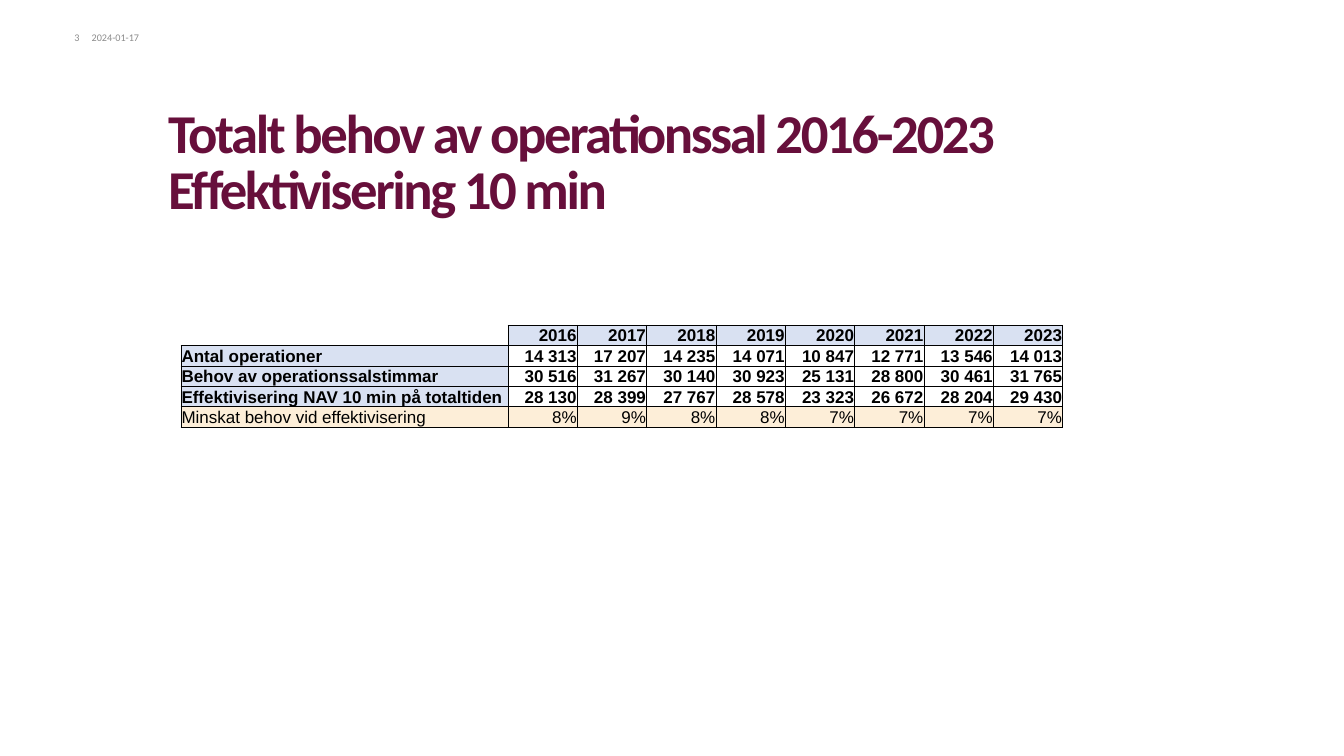
from lxml.etree import SubElement
from pptx import Presentation
from pptx.dml.color import RGBColor
from pptx.enum.text import MSO_ANCHOR as Anchor, MSO_AUTO_SIZE as AutoSize, PP_ALIGN as Align
from pptx.oxml.ns import qn
from pptx.util import Pt

PLUM = RGBColor(0x67, 0x0F, 0x3B)
GREY = RGBColor(0x8C, 0x8C, 0x8C)
BLACK = RGBColor(0, 0, 0)
PALE_BLUE = RGBColor(0xD9, 0xE1, 0xF2)
PALE_ORANGE = RGBColor(0xFD, 0xEE, 0xD8)

TITLE = "Totalt behov av operationssal 2016-2023\vEffektivisering 10 min"
ROWS = [
    ["", *(str(year) for year in range(2016, 2024))],
    ["Antal operationer", "14 313", "17 207", "14 235", "14 071",
     "10 847", "12 771", "13 546", "14 013"],
    ["Behov av operationssalstimmar", "30 516", "31 267", "30 140", "30 923",
     "25 131", "28 800", "30 461", "31 765"],
    ["Effektivisering NAV 10 min på totaltiden", "28 130", "28 399", "27 767", "28 578",
     "23 323", "26 672", "28 204", "29 430"],
    ["Minskat behov vid effektivisering", "8%", "9%", "8%", "8%", "7%", "7%", "7%", "7%"],
]
LABEL_WIDTH = 385.2
ROW_HEIGHT = 23


def format_runs(paragraph, name, size, color, bold=False):
    for run in paragraph.runs:
        font = run.font
        font.name, font.size, font.bold = name, Pt(size), bold
        font.color.rgb = color


def set_margins(owner, left, top, right, bottom):
    owner.margin_left, owner.margin_top = Pt(left), Pt(top)
    owner.margin_right, owner.margin_bottom = Pt(right), Pt(bottom)


def add_title(slide, left, top, width, height):
    title = slide.shapes.title
    title.left, title.top, title.width, title.height = map(Pt, (left, top, width, height))
    frame = title.text_frame
    frame.text = TITLE
    frame.word_wrap = True
    frame.auto_size = AutoSize.NONE
    frame.vertical_anchor = Anchor.BOTTOM
    set_margins(frame, 0, 0, 0, 6)
    heading = frame.paragraphs[0]
    heading.alignment = Align.LEFT
    heading.line_spacing = 0.85
    format_runs(heading, "Calibri", 64.5, PLUM, bold=True)
    for run in heading.runs:
        run.font._element.set("spc", "-280")


def add_page_label(slide, text, align, left, top, width, height):
    frame = slide.shapes.add_textbox(*map(Pt, (left, top, width, height))).text_frame
    frame.text = text
    frame.word_wrap = True
    frame.auto_size = AutoSize.SHAPE_TO_FIT_TEXT
    set_margins(frame, 0, 0, 0, 0)
    label = frame.paragraphs[0]
    label.alignment = align
    format_runs(label, "Calibri", 12, GREY)


def add_borders(cell, sides, width):
    """Draw black borders on the given sides, in the order L, R, T, B."""
    properties = cell._tc.get_or_add_tcPr()
    for side in sides:
        line = SubElement(properties, qn(f"a:ln{side}"), w=str(Pt(width)))
        fill = SubElement(line, qn("a:solidFill"))
        SubElement(fill, qn("a:srgbClr"), val=str(BLACK))


def format_cell(cell, row, column):
    is_corner = row == column == 0
    is_saving = row == len(ROWS) - 1
    set_margins(cell, 0.72, 0, 0.72, 0)
    cell.vertical_anchor = Anchor.BOTTOM
    add_borders(cell, "RB" if is_corner else "LRTB", 1 if is_saving else 0.5)
    if is_saving:
        cell.fill.solid()
        cell.fill.fore_color.rgb = PALE_ORANGE
    elif (row == 0 or column == 0) and not is_corner:
        cell.fill.solid()
        cell.fill.fore_color.rgb = PALE_BLUE
    else:
        cell.fill.background()
    entry = cell.text_frame.paragraphs[0]
    entry.alignment = Align.RIGHT if column else Align.LEFT
    format_runs(entry, "Arial", 20, BLACK, bold=not is_saving)


def add_needs_table(slide, left, top, width):
    years = len(ROWS[0]) - 1
    table = slide.shapes.add_table(
        len(ROWS), years + 1, Pt(left), Pt(top), Pt(width), Pt(ROW_HEIGHT * len(ROWS))).table
    table.first_row = table.horz_banding = False
    for index, column in enumerate(table.columns):
        column.width = Pt((width - LABEL_WIDTH) / years if index else LABEL_WIDTH)
    for row, values in enumerate(ROWS):
        table.rows[row].height = Pt(ROW_HEIGHT)
        for column, value in enumerate(values):
            cell = table.cell(row, column)
            cell.text = value
            format_cell(cell, row, column)


def main():
    deck = Presentation()
    deck.slide_width, deck.slide_height = Pt(1583.28), Pt(890.64)
    slide = deck.slides.add_slide(deck.slide_layouts[5])
    add_title(slide, 198, 105.12, 1069.92, 160.56)
    add_page_label(slide, "2024-01-17", Align.LEFT, 108, 37.44, 62.64, 14.4)
    add_page_label(slide, "3", Align.RIGHT, 65.52, 37.44, 28.08, 14.4)
    add_needs_table(slide, 213.12, 383.04, 1038.96)
    deck.save("out.pptx")


if __name__ == "__main__":
    main()
